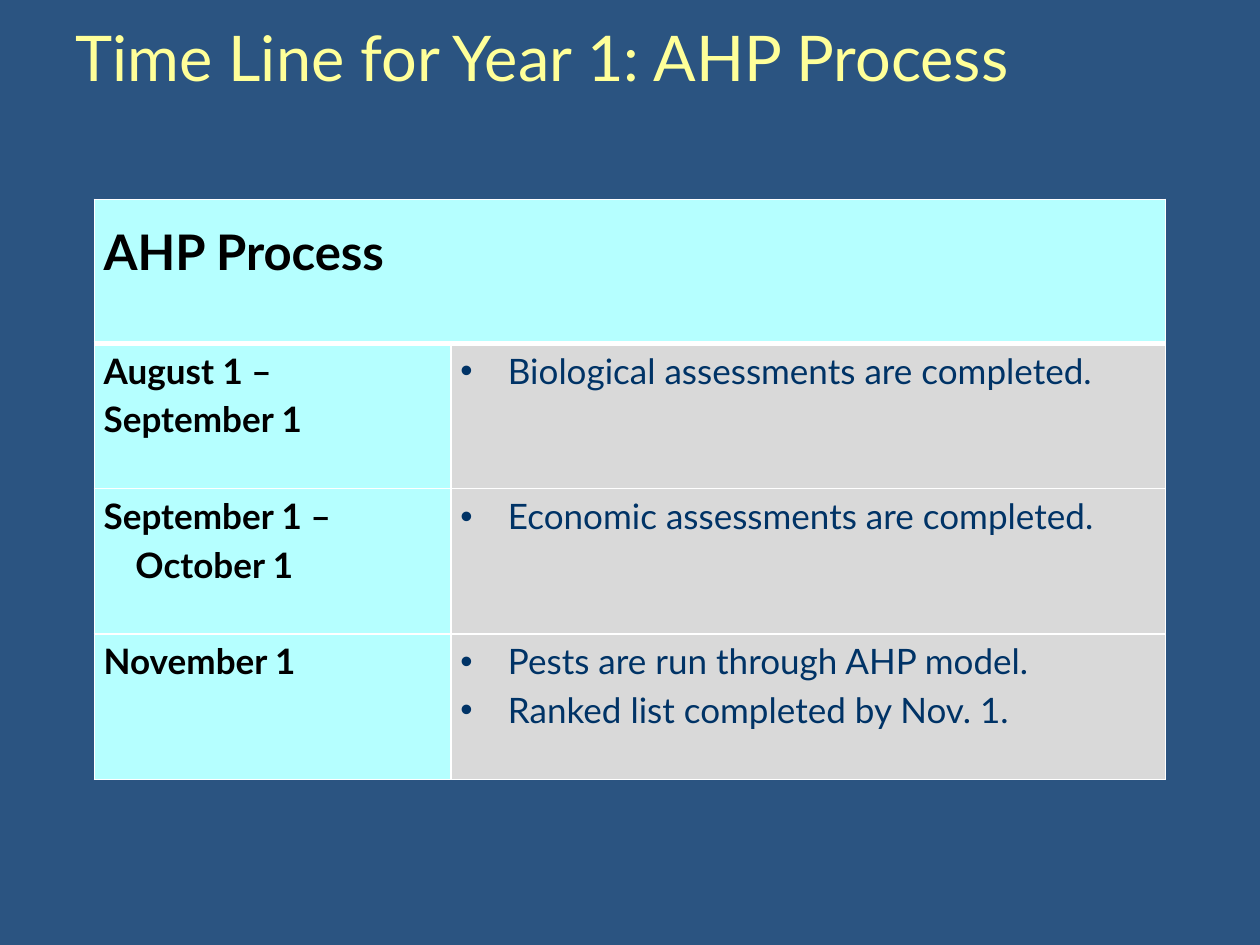
from typing import NamedTuple

from lxml import etree
from pptx import Presentation
from pptx.dml.color import RGBColor
from pptx.enum.text import MSO_ANCHOR
from pptx.oxml.ns import qn
from pptx.util import Cm, Pt

TOP, MIDDLE = MSO_ANCHOR.TOP, MSO_ANCHOR.MIDDLE
FONT = "Lato"
BLUE = RGBColor(0x2B, 0x54, 0x81)
YELLOW = RGBColor(0xFF, 0xFF, 0x99)
CYAN = RGBColor(0xB5, 0xFF, 0xFF)
GREY = RGBColor(0xD9, 0xD9, 0xD9)
NAVY = RGBColor(0x00, 0x33, 0x66)
BLACK = RGBColor(0x00, 0x00, 0x00)
WHITE = RGBColor(0xFF, 0xFF, 0xFF)


class Style(NamedTuple):
    size: int
    color: RGBColor
    bold: bool = False
    spacing: float = 1.15
    indent: float = 0
    bullet: bool = False


class Step(NamedTuple):
    date: str
    tasks: list[str]
    indent: float = 0


TITLE = Style(36, YELLOW, spacing=1)
HEAD = Style(28, BLACK, bold=True)
DATE = Style(20, BLACK, bold=True)
TASK = Style(20, NAVY, indent=0.96, bullet=True)

STEPS = [
    Step("August 1 – September 1", ["Biological assessments are completed."]),
    Step("September 1 – October 1", ["Economic assessments are completed."], 0.64),
    Step("November 1", ["Pests are run through AHP model.",
                        "Ranked list completed by Nov. 1."]),
]


def write(frame, lines: list[str], style: Style) -> None:
    """Fill a text frame with one paragraph per line."""
    frame.text = "\n".join(lines)
    for para in frame.paragraphs:
        para.line_spacing = style.spacing
        props = para._p.get_or_add_pPr()
        if style.indent:
            props.set("marL", str(Cm(style.indent)))
            props.set("indent", str(-Cm(style.indent)))
        if style.bullet:
            etree.SubElement(props, qn("a:buFont"), typeface="Arial")
            etree.SubElement(props, qn("a:buChar"), char="•")
        for run in para.runs:
            font = run.font
            font.name, font.size, font.bold = FONT, Pt(style.size), style.bold
            font.color.rgb = style.color


def frame_cell(cell, fill: RGBColor, top: int = 1, bottom: int = 1) -> None:
    """Give a cell white borders, a fill and narrow margins."""
    props = cell._tc.get_or_add_tcPr()
    for side, width in (("L", 1), ("R", 1), ("T", top), ("B", bottom)):
        line = etree.SubElement(props, qn(f"a:ln{side}"), w=str(Pt(width)))
        paint = etree.SubElement(line, qn("a:solidFill"))
        etree.SubElement(paint, qn("a:srgbClr"), val=str(WHITE))
    cell.fill.solid()
    cell.fill.fore_color.rgb = fill
    cell.margin_left = cell.margin_right = Cm(0.19)
    cell.margin_top = cell.margin_bottom = 0
    cell.vertical_anchor = TOP


def add_title(slide, text: str) -> None:
    box = slide.shapes.add_textbox(Cm(1.27), Cm(0.38), Cm(22.86), Cm(1.52))
    frame = box.text_frame
    frame.word_wrap = True
    frame.margin_top = frame.margin_bottom = 0
    write(frame, [text], TITLE)


def add_plan(slide, head: str, steps: list[Step]) -> None:
    shape = slide.shapes.add_table(len(steps) + 1, 2, Cm(1.9), Cm(4.02),
                                   Cm(21.59), Cm(11.69))
    table = shape.table
    table.columns[0].width, table.columns[1].width = Cm(7.19), Cm(14.4)

    # Heading across both columns
    table.rows[0].height = Cm(2.9)
    for cell in table.rows[0].cells:
        frame_cell(cell, CYAN, bottom=3)
    first = table.cell(0, 0)
    first.merge(table.cell(0, 1))
    first.vertical_anchor = MIDDLE
    first.margin_bottom = Cm(0.97)
    write(first.text_frame, [head], HEAD)

    # One row per step
    for row, step in enumerate(steps, 1):
        table.rows[row].height = Cm(2.93)
        date, tasks = table.rows[row].cells
        top = 3 if row == 1 else 1
        frame_cell(date, CYAN, top)
        frame_cell(tasks, GREY, top)
        write(date.text_frame, [step.date], DATE._replace(indent=step.indent))
        write(tasks.text_frame, step.tasks, TASK)


def main() -> None:
    deck = Presentation()
    deck.slide_width, deck.slide_height = Cm(25.4), Cm(19.05)
    slide = deck.slides.add_slide(deck.slide_layouts[6])
    slide.background.fill.solid()
    slide.background.fill.fore_color.rgb = BLUE
    add_title(slide, "Time Line for Year 1: AHP Process")
    add_plan(slide, "AHP Process", STEPS)
    deck.save("out.pptx")


if __name__ == "__main__":
    main()
